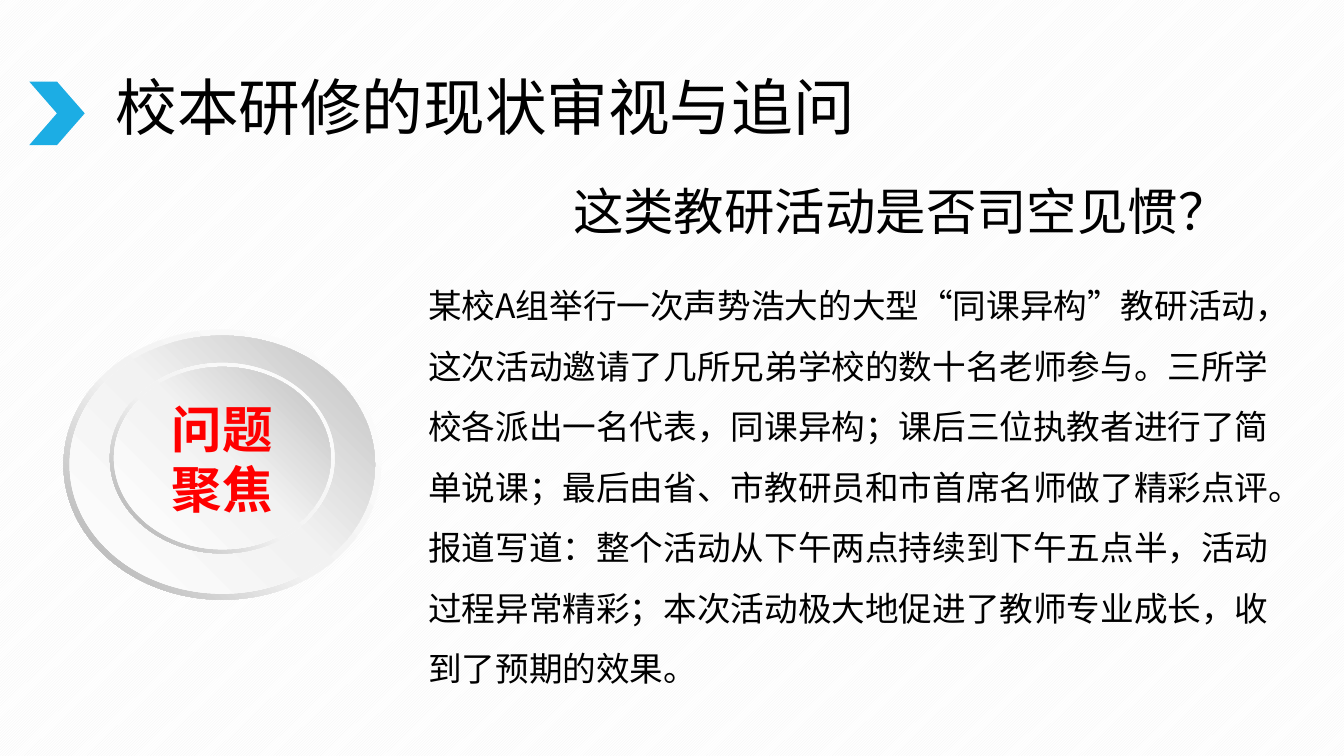
from copy import deepcopy

from lxml.etree import SubElement
from pptx import Presentation
from pptx.dml.color import RGBColor
from pptx.enum.dml import MSO_PATTERN
from pptx.enum.shapes import MSO_SHAPE
from pptx.enum.text import MSO_ANCHOR, MSO_AUTO_SIZE, PP_ALIGN
from pptx.oxml.ns import qn
from pptx.util import Inches, Pt

FONT = "Noto Sans CJK SC"
TITLE = "校本研修的现状审视与追问"
ASK = "这类教研活动是否司空见惯？"
STORY = (
    "某校A组举行一次声势浩大的大型“同课异构”教研活动，"
    "这次活动邀请了几所兄弟学校的数十名老师参与。"
    "三所学校各派出一名代表，同课异构；课后三位执教者进行了简单说课；"
    "最后由省、市教研员和市首席名师做了精彩点评。"
    "报道写道：整个活动从下午两点持续到下午五点半，活动过程异常精彩；"
    "本次活动极大地促进了教师专业成长，收到了预期的效果。"
)
RING = ([(0, "FFFFFF"), (0.55, "F2F2F2"), (1, "A6A6A6")], 225)
DISC = ([(0, "FFFFFF"), (0.51, "F2F2F2"), (1, "BFBFBF")], 45)


def color(code):
    return RGBColor.from_string(code)


def write(frame, text, size, code="000000", bold=False, align=PP_ALIGN.CENTER, space=None):
    frame.word_wrap = True
    para = frame.paragraphs[0]
    para.text = text
    para.alignment = align
    if space:
        para.line_spacing = space
    font = para.font
    font.size = Pt(size)
    font.bold = bold
    font.color.rgb = color(code)
    font.name = FONT
    props = para._p.pPr.find(qn("a:defRPr"))
    SubElement(props, qn("a:ea")).set("typeface", FONT)


def shade(fill, stops, angle):
    fill.gradient()
    fill.gradient_angle = angle
    first = fill.gradient_stops[0]._gs
    first.addnext(deepcopy(first))
    for stop, (place, code) in zip(fill.gradient_stops, stops):
        stop.position = place
        stop.color.rgb = color(code)


def add_round(group, kind, box, paint):
    shape = group.shapes.add_shape(kind, *map(Inches, box))
    shape.shadow.inherit = False
    shape.line.fill.background()
    shade(shape.fill, *paint)
    return shape


def add_dial(group, box, rim):
    left, top, width, height = box
    ring = add_round(group, MSO_SHAPE.DONUT, box, RING)
    ring.adjustments[0] = 0.049
    inner = (left + rim, top + rim, width - 2 * rim, height - 2 * rim)
    return add_round(group, MSO_SHAPE.OVAL, inner, DISC)


def add_badge(slide, box):
    left, top, width, height = box
    group = slide.shapes.add_group_shape()
    add_dial(group, box, 0.06)
    disc = add_dial(group, (left + 0.46, top + 0.33, width - 0.92, height - 0.79), 0.04)
    disc.text_frame.vertical_anchor = MSO_ANCHOR.MIDDLE
    write(disc.text_frame, "问题聚焦", 36, "FF0000", True)


def add_head(slide, box):
    left, top, width, height = box
    mark = slide.shapes.add_shape(
        MSO_SHAPE.CHEVRON, Inches(left), Inches(top + 0.07), Inches(0.55), Inches(0.63)
    )
    mark.shadow.inherit = False
    mark.fill.solid()
    mark.fill.fore_color.rgb = color("1CADE4")
    mark.line.fill.background()
    title = slide.shapes.title
    title.left, title.top = Inches(left + 0.59), Inches(top)
    title.width, title.height = Inches(width - 0.59), Inches(height)
    title.text_frame.auto_size = MSO_AUTO_SIZE.NONE
    title.text_frame.vertical_anchor = MSO_ANCHOR.MIDDLE
    write(title.text_frame, TITLE, 44, space=0.9)


def add_text(slide, box, text, size, **style):
    frame = slide.shapes.add_textbox(*map(Inches, box)).text_frame
    write(frame, text, size, **style)
    frame.auto_size = MSO_AUTO_SIZE.SHAPE_TO_FIT_TEXT


def main():
    deck = Presentation()
    deck.slide_width, deck.slide_height = Inches(13.33), Inches(7.5)
    slide = deck.slides.add_slide(deck.slide_layouts[5])
    back = slide.background.fill
    back.patterned()
    back.pattern = MSO_PATTERN.LIGHT_UPWARD_DIAGONAL
    back.fore_color.rgb = color("F2F2F2")
    back.back_color.rgb = color("FFFFFF")
    add_head(slide, (0.29, 0.74, 8.46, 0.71))
    add_badge(slide, (0.63, 3.27, 3.15, 2.68))
    add_text(slide, (4.15, 2.58, 8.86, 4.34), STORY, 24, align=PP_ALIGN.LEFT, space=1.5)
    add_text(slide, (5.27, 1.74, 7.33, 1.01), ASK, 36)
    deck.save("out.pptx")


if __name__ == "__main__":
    main()
